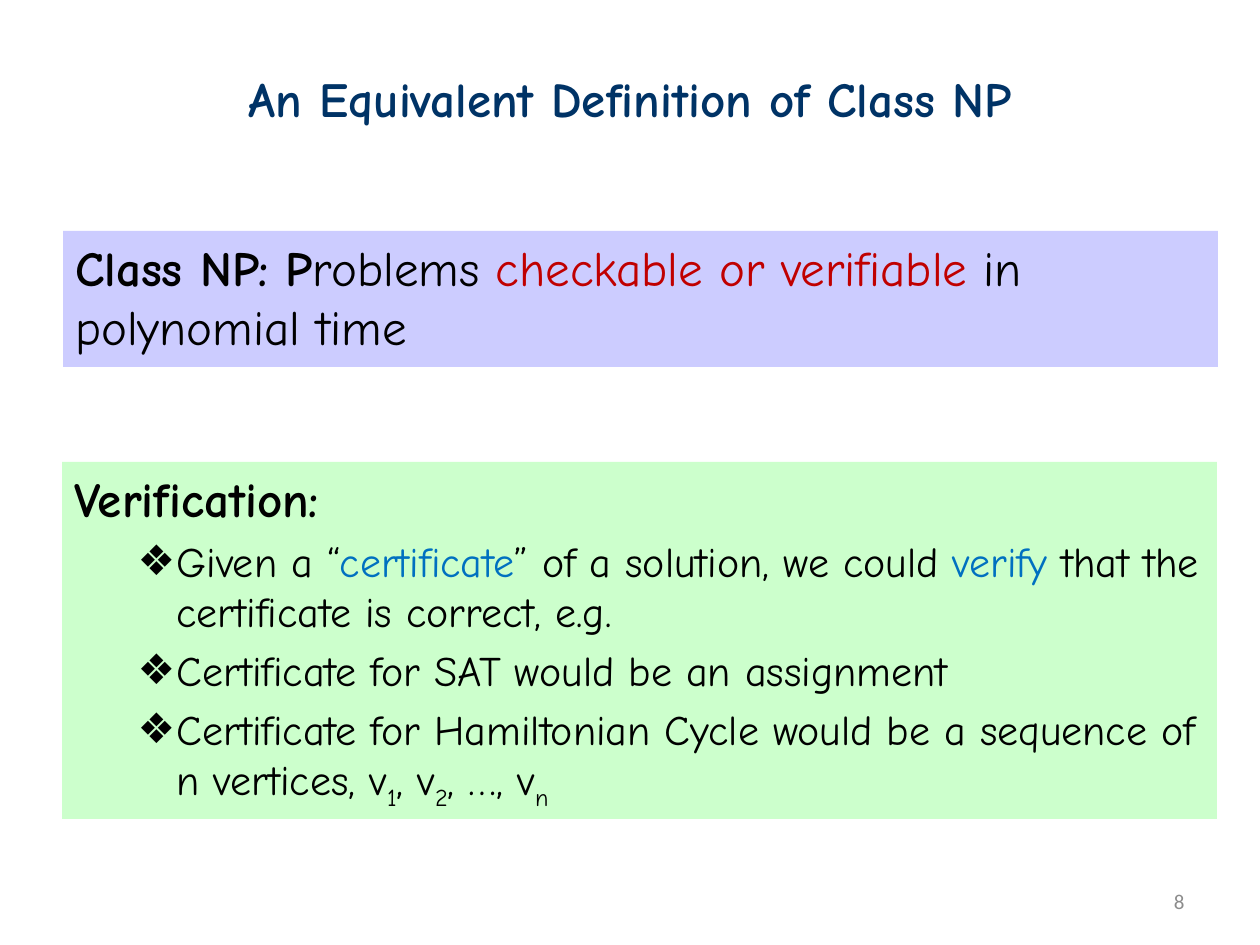
from lxml.etree import SubElement
from pptx import Presentation
from pptx.dml.color import RGBColor
from pptx.enum.shapes import MSO_SHAPE
from pptx.enum.text import MSO_ANCHOR as Anchor, MSO_AUTO_SIZE as AutoSize, PP_ALIGN as Align
from pptx.oxml.ns import qn
from pptx.util import Emu, Pt

EMU_PER_PX = 914400 / 126
NAVY = RGBColor(0x00, 0x33, 0x66)
BLACK = RGBColor(0x00, 0x00, 0x00)
RED = RGBColor(0xC0, 0x00, 0x00)
BLUE = RGBColor(0x00, 0x70, 0xC0)
GRAY = RGBColor(0x8C, 0x8C, 0x8C)
LAVENDER = RGBColor(0xCC, 0xCC, 0xFF)
MINT = RGBColor(0xCC, 0xFF, 0xCC)

BASE = {"name": "Comic Neue", "size": Pt(28), "bold": False}
HEADING = BASE | {"bold": True}
ITEM = BASE | {"size": Pt(24)}
NUMBER = {"name": "Calibri", "size": Pt(12), "bold": False}

ITEMS = [
    [("Given a “", BLACK), ("certificate", BLUE), ("” of a solution, we could ", BLACK),
     ("verify ", BLUE), ("that the certificate is correct, e.g.", BLACK)],
    [("Certificate for SAT would be an assignment", BLACK)],
    [("Certificate for Hamiltonian Cycle would be a sequence of n vertices, v", BLACK),
     ("1", BLACK, True), (", v", BLACK), ("2", BLACK, True), (", …, v", BLACK),
     ("n", BLACK, True)],
]


def px(length):
    return Emu(round(length * EMU_PER_PX))


def set_values(target, values):
    for name, value in values.items():
        setattr(target, name, value)


def place(shape, left, top, width, height):
    set_values(shape, {"left": px(left), "top": px(top),
                       "width": px(width), "height": px(height)})


def format_frame(shape, anchor):
    set_values(shape.text_frame, {"word_wrap": True, "auto_size": AutoSize.NONE,
                                  "vertical_anchor": anchor})


def fill_shape(shape, color):
    shape.fill.solid()
    shape.fill.fore_color.rgb = color


def add_run(paragraph, text, font, color, subscript=False):
    run = paragraph.add_run()
    run.text = text
    set_values(run.font, font)
    run.font.color.rgb = color
    if subscript:
        run._r.get_or_add_rPr().set("baseline", "-25000")


def set_bullet(paragraph, character, margin, indent):
    properties = paragraph._p.get_or_add_pPr()
    properties.set("marL", str(px(margin)))
    properties.set("indent", str(px(indent)))
    if character:
        SubElement(properties, qn("a:buChar")).set("char", character)
    else:
        SubElement(properties, qn("a:buNone"))


def add_title(slide):
    title = slide.shapes.title
    place(title, 63, 38, 1134, 120)
    format_frame(title, Anchor.MIDDLE)
    paragraph = title.text_frame.paragraphs[0]
    paragraph.alignment = Align.CENTER
    add_run(paragraph, "An Equivalent Definition of Class NP", HEADING, NAVY)


def add_definition(slide):
    box = slide.shapes.add_shape(MSO_SHAPE.RECTANGLE, 0, 0, 0, 0)
    place(box, 63, 231, 1155, 136)
    box.shadow.inherit = False
    fill_shape(box, LAVENDER)
    box.line.fill.background()
    format_frame(box, Anchor.TOP)
    paragraph = box.text_frame.paragraphs[0]
    set_values(paragraph, {"alignment": Align.LEFT, "space_before": Pt(5.6)})
    add_run(paragraph, "Class NP: P", HEADING, BLACK)
    for text, color in (("roblems ", BLACK), ("checkable or verifiable ", RED),
                        ("in polynomial time", BLACK)):
        add_run(paragraph, text, BASE, color)


def add_verification(slide):
    body = slide.placeholders[1]
    place(body, 62, 462, 1155, 357)
    fill_shape(body, MINT)
    format_frame(body, Anchor.TOP)
    heading = body.text_frame.paragraphs[0]
    heading.space_before = Pt(5.6)
    set_bullet(heading, None, 0, 0)
    add_run(heading, "Verification:", HEADING, BLACK)
    for item in ITEMS:
        paragraph = body.text_frame.add_paragraph()
        set_values(paragraph, {"level": 1, "space_before": Pt(4.8)})
        set_bullet(paragraph, "❖", 102, -39)
        for text, color, *subscript in item:
            add_run(paragraph, text, ITEM, color, *subscript)


def add_slide_number(slide):
    box = slide.shapes.add_textbox(0, 0, 0, 0)
    place(box, 903, 876, 294, 50)
    format_frame(box, Anchor.MIDDLE)
    paragraph = box.text_frame.paragraphs[0]
    paragraph.alignment = Align.RIGHT
    add_run(paragraph, "8", NUMBER, GRAY)


def main():
    presentation = Presentation()
    set_values(presentation, {"slide_width": px(1260), "slide_height": px(945)})
    slide = presentation.slides.add_slide(presentation.slide_layouts[1])
    add_title(slide)
    add_definition(slide)
    add_verification(slide)
    add_slide_number(slide)
    presentation.save("out.pptx")


if __name__ == "__main__":
    main()
